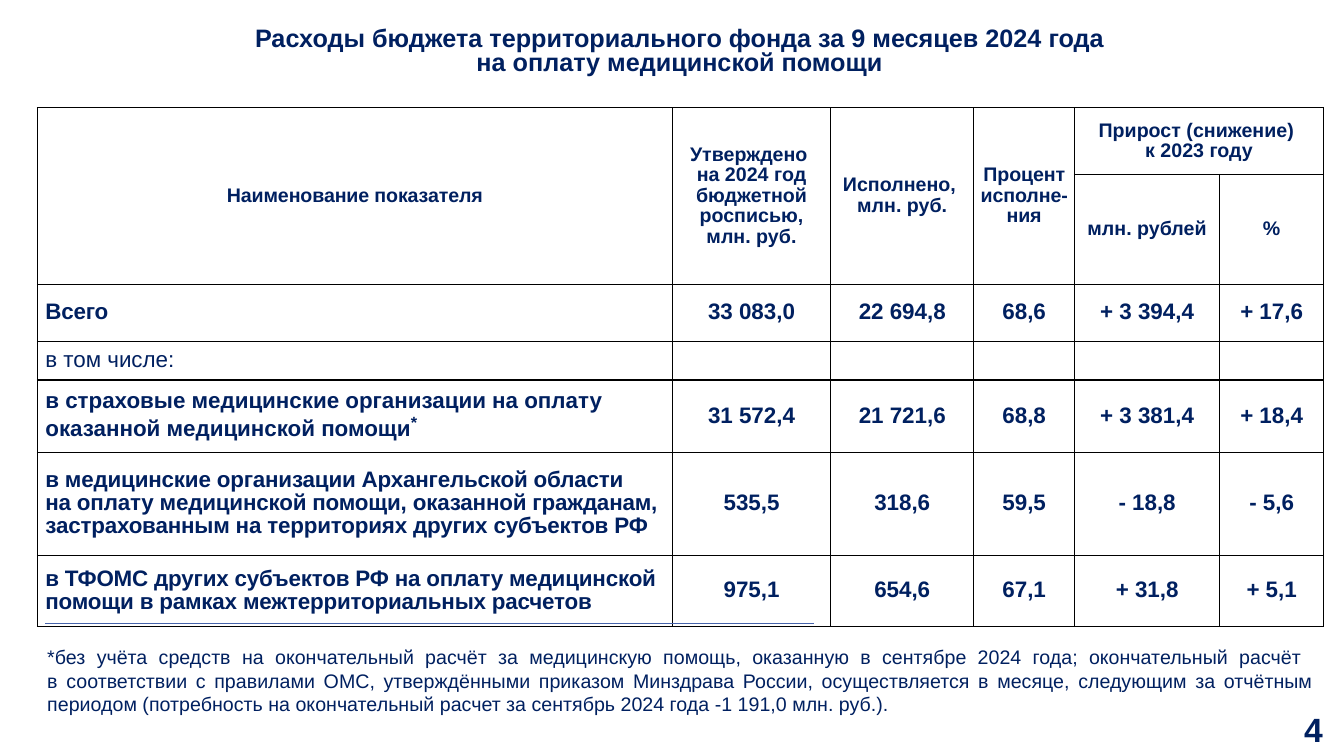
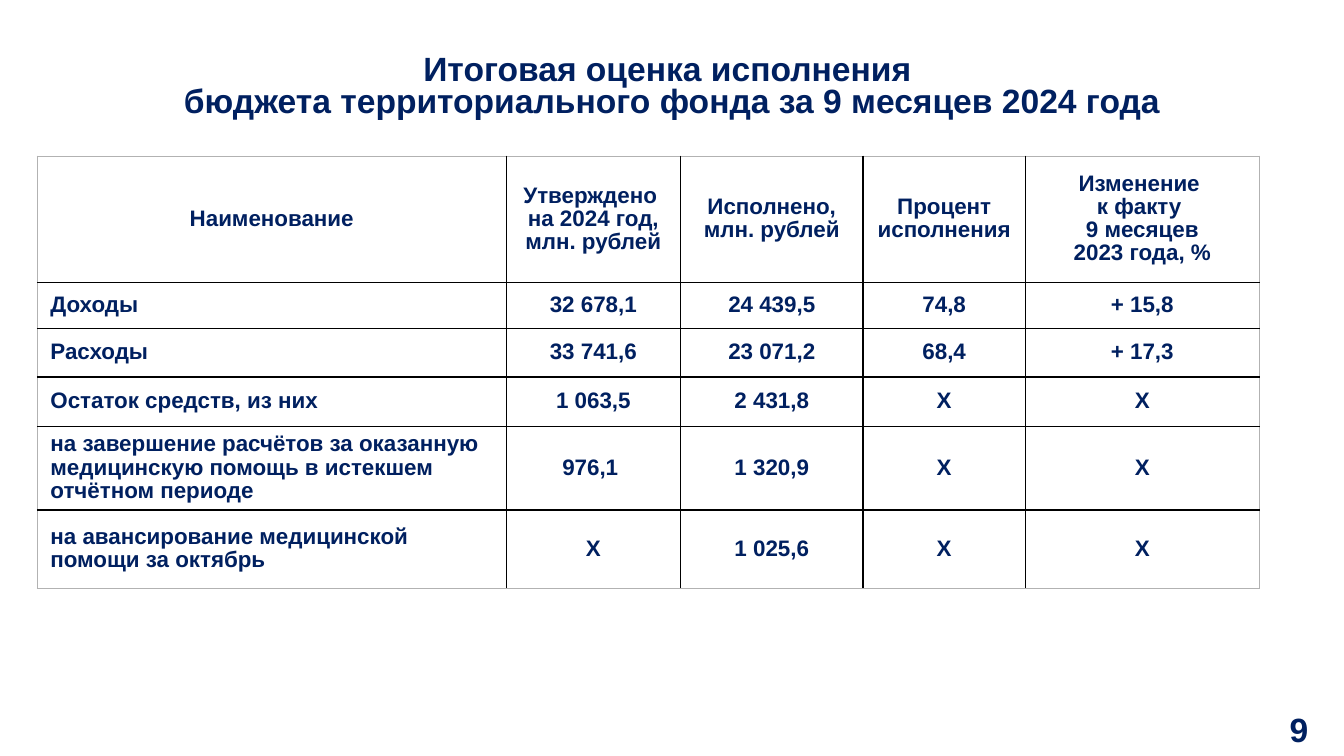
from dataclasses import dataclass

from lxml import etree
from pptx import Presentation
from pptx.dml.color import RGBColor
from pptx.enum.shapes import MSO_CONNECTOR
from pptx.enum.text import MSO_ANCHOR, PP_ALIGN
from pptx.oxml.ns import qn
from pptx.util import Inches, Pt

CENTER, LEFT, JUSTIFY = PP_ALIGN.CENTER, PP_ALIGN.LEFT, PP_ALIGN.JUSTIFY
MIDDLE = MSO_ANCHOR.MIDDLE
STRAIGHT = MSO_CONNECTOR.STRAIGHT

WIDTH, HEIGHT = Inches(13.33), Inches(7.5)
NAVY, BLUE, BLACK, GRAY = "002060", "4663AB", "000000", "B2B2B2"
FONT = "Arial"
MARGIN = 2.78
NUMBER_TOP, NUMBER_HEIGHT = 93.07, 6.67
TITLE_SPACING, CELL_SPACING = 0.8, 0.93
TIGHT = -0.1


@dataclass(frozen=True)
class Area:
    left: float
    top: float
    width: float
    height: float


@dataclass(frozen=True)
class Entry:
    text: str = ""
    bold: bool = True
    superscript: str = ""
    tracking: float = 0


@dataclass(frozen=True)
class Grid:
    top: float
    columns: tuple[float, ...]
    rows: tuple[float, ...]
    entries: tuple[tuple[Entry | str, ...], ...]
    header_rows: int
    header_size: int
    header_padding: tuple[float, float]
    padding: tuple[float, float]
    outer_color: str
    merges: tuple[tuple[int, int, int, int], ...] = ()


def color(value: str) -> RGBColor:
    return RGBColor.from_string(value)


def across(percent: float) -> int:
    return round(WIDTH * percent / 100)


def down(percent: float) -> int:
    return round(HEIGHT * percent / 100)


def add_span(para, text: str, size: float, bold: bool, tracking: float = 0):
    span = para.add_run()
    span.text = text
    font = span.font
    font.name, font.size, font.bold = FONT, Pt(size), bold
    font.color.rgb = color(NAVY)
    if tracking:
        span._r.get_or_add_rPr().set("spc", str(round(tracking * 100)))
    return span


def write(frame, text: str, *, size: float, bold: bool = True, align=CENTER,
          spacing: float | None = None, superscript: str = "",
          tracking: float = 0) -> None:
    frame.word_wrap = True
    for index, content in enumerate(text.split("\n")):
        para = frame.add_paragraph() if index else frame.paragraphs[0]
        para.alignment, para.line_spacing = align, spacing
        for number, line in enumerate(content.split("\v")):
            if number:
                para.add_line_break()
            if line:
                add_span(para, line, size, bold, tracking)
    if superscript:
        mark = add_span(frame.paragraphs[-1], superscript, size + 4, bold)
        mark._r.get_or_add_rPr().set("baseline", "30000")


def add_text(page, area: Area, text: str, **formatting) -> None:
    box = page.shapes.add_textbox(across(area.left), down(area.top),
                                  across(area.width), down(area.height))
    write(box.text_frame, text, **formatting)


def add_title(page, area: Area, text: str, size: float) -> None:
    add_text(page, area, text, size=size, spacing=TITLE_SPACING)


def add_number(page, left: float, width: float, number: int) -> None:
    area = Area(left, NUMBER_TOP, width, NUMBER_HEIGHT)
    add_text(page, area, str(number), size=24)


def add_border(cell, side: str, value: str) -> None:
    properties = cell._tc.get_or_add_tcPr()
    line = etree.SubElement(properties, qn(f"a:ln{side}"), w=str(Pt(1)))
    fill = etree.SubElement(line, qn("a:solidFill"))
    etree.SubElement(fill, qn("a:srgbClr"), val=value)


def add_grid(page, grid: Grid) -> None:
    last_row, last_column = len(grid.rows) - 1, len(grid.columns) - 1
    table = page.shapes.add_table(
        len(grid.rows), len(grid.columns), across(MARGIN), down(grid.top),
        across(sum(grid.columns)), down(sum(grid.rows))).table
    table.first_row = table.horz_banding = False
    for column, width in zip(table.columns, grid.columns):
        column.width = across(width)
    for row, height in zip(table.rows, grid.rows):
        row.height = down(height)
    for top, left, bottom, right in grid.merges:
        table.cell(top, left).merge(table.cell(bottom, right))
    for row, entries in enumerate(grid.entries):
        header = row < grid.header_rows
        horizontal, vertical = grid.header_padding if header else grid.padding
        for column, item in enumerate(entries):
            cell = table.cell(row, column)
            entry = Entry(item) if isinstance(item, str) else item
            outer = {"L": column == 0, "R": column == last_column,
                     "T": row == 0, "B": row == last_row}
            for side, at_edge in outer.items():
                add_border(cell, side, grid.outer_color if at_edge else BLACK)
            cell.fill.background()
            cell.vertical_anchor = MIDDLE
            cell.margin_left = cell.margin_right = Inches(horizontal)
            cell.margin_top = cell.margin_bottom = Inches(vertical)
            write(cell.text_frame, entry.text, bold=entry.bold,
                  size=grid.header_size if header else 16,
                  align=CENTER if header or column else LEFT,
                  spacing=CELL_SPACING, superscript=entry.superscript,
                  tracking=entry.tracking)


def add_rule(page, left: float, right: float, top: float) -> None:
    rule = page.shapes.add_connector(STRAIGHT, across(left), down(top),
                                     across(right), down(top))
    rule.line.color.rgb = color(BLUE)
    rule.line.width = Pt(0.75)
    etree.SubElement(rule._element.spPr, qn("a:effectLst"))


EXPENSES = Grid(
    top=14.27,
    columns=(47.25, 11.78, 10.65, 7.5, 10.8, 7.73),
    rows=(8.8, 14.53, 7.6, 5.07, 9.6, 13.6, 9.47),
    entries=(
        (Entry("Наименование показателя", tracking=TIGHT),
         "Утверждено \nна 2024 год бюджетной росписью,\nмлн. руб.",
         "Исполнено, \vмлн. руб.",
         Entry("Процент исполне-ния", tracking=TIGHT),
         "Прирост (снижение) \vк 2023 году", ""),
        ("", "", "", "", "млн. рублей", "%"),
        (Entry("Всего", tracking=TIGHT),
         "33 083,0", "22 694,8", "68,6", "+ 3 394,4", "+ 17,6"),
        (Entry("в том числе:", bold=False), "", "", "", "", ""),
        (Entry("в страховые медицинские организации на оплату оказанной "
               "медицинской помощи", superscript="*"),
         "31 572,4", "21 721,6", "68,8", "+ 3 381,4", "+ 18,4"),
        (Entry("в медицинские организации Архангельской области\n"
               "на оплату медицинской помощи, оказанной гражданам, "
               "застрахованным на территориях других субъектов РФ",
               tracking=TIGHT),
         "535,5", "318,6", "59,5", "- 18,8", "- 5,6"),
        (Entry("в ТФОМС других субъектов РФ на оплату медицинской помощи "
               "в рамках межтерриториальных расчетов", tracking=TIGHT),
         "975,1", "654,6", "67,1", "+ 31,8", "+ 5,1"),
    ),
    header_rows=2, header_size=14, header_padding=(0, 0), padding=(0.08, 0),
    outer_color=BLACK,
    merges=tuple((0, column, 1, column) for column in range(4)) + ((0, 4, 0, 5),),
)

SUMMARY = Grid(
    top=20.67,
    columns=(34.88, 12.98, 13.58, 12.08, 17.4),
    rows=(16.67, 6.13, 6.4, 6.53, 11.07, 10.4),
    entries=(
        ("Наименование", "Утверждено \vна 2024 год,\nмлн. рублей",
         "Исполнено,\nмлн. рублей", "Процент исполнения",
         "Изменение \nк факту \n9 месяцев\n2023 года, %"),
        ("Доходы", "32 678,1", "24 439,5", "74,8", "+ 15,8"),
        ("Расходы", "33 741,6", "23 071,2", "68,4", "+ 17,3"),
        ("Остаток средств, из них", "1 063,5", "2 431,8", "Х", "Х"),
        ("на завершение расчётов за оказанную медицинскую помощь "
         "в истекшем отчётном периоде", "976,1 ", "1 320,9", "Х", "Х"),
        ("на авансирование медицинской помощи за октябрь",
         "Х", "1 025,6", "Х", "Х"),
    ),
    header_rows=1, header_size=16, header_padding=(0.13, 0.05),
    padding=(0.13, 0.04), outer_color=GRAY,
)

FOOTNOTE = (
    "*без учёта средств на окончательный расчёт за медицинскую помощь, "
    "оказанную в сентябре 2024 года; окончательный расчёт \v"
    "в соответствии с правилами ОМС, утверждёнными приказом Минздрава России, "
    "осуществляется в месяце, следующим за отчётным периодом (потребность "
    "на окончательный расчет за сентябрь 2024 года -1 191,0 млн. руб.).")


def build_expenses(page) -> None:
    add_title(page, Area(6.08, 3.07, 88.97, 9.47),
              "Расходы бюджета территориального фонда за 9 месяцев 2024 года\v"
              "на оплату медицинской помощи", 18)
    add_grid(page, EXPENSES)
    add_number(page, 95.48, 4.5, 4)
    add_rule(page, 3.38, 60.6, 82.53)
    add_text(page, Area(MARGIN, 84.67, 95.7, 10.8), FOOTNOTE,
             size=14, bold=False, align=JUSTIFY)


def build_summary(page) -> None:
    add_title(page, Area(5, 6.67, 90, 8.67),
              "Итоговая оценка исполнения \v"
              "бюджета территориального фонда за 9 месяцев 2024 года", 24)
    add_grid(page, SUMMARY)
    add_number(page, 93.68, 5.93, 9)


def main() -> None:
    deck = Presentation()
    deck.slide_width, deck.slide_height = WIDTH, HEIGHT
    for build in (build_expenses, build_summary):
        build(deck.slides.add_slide(deck.slide_layouts[6]))
    deck.save("out.pptx")


if __name__ == "__main__":
    main()
